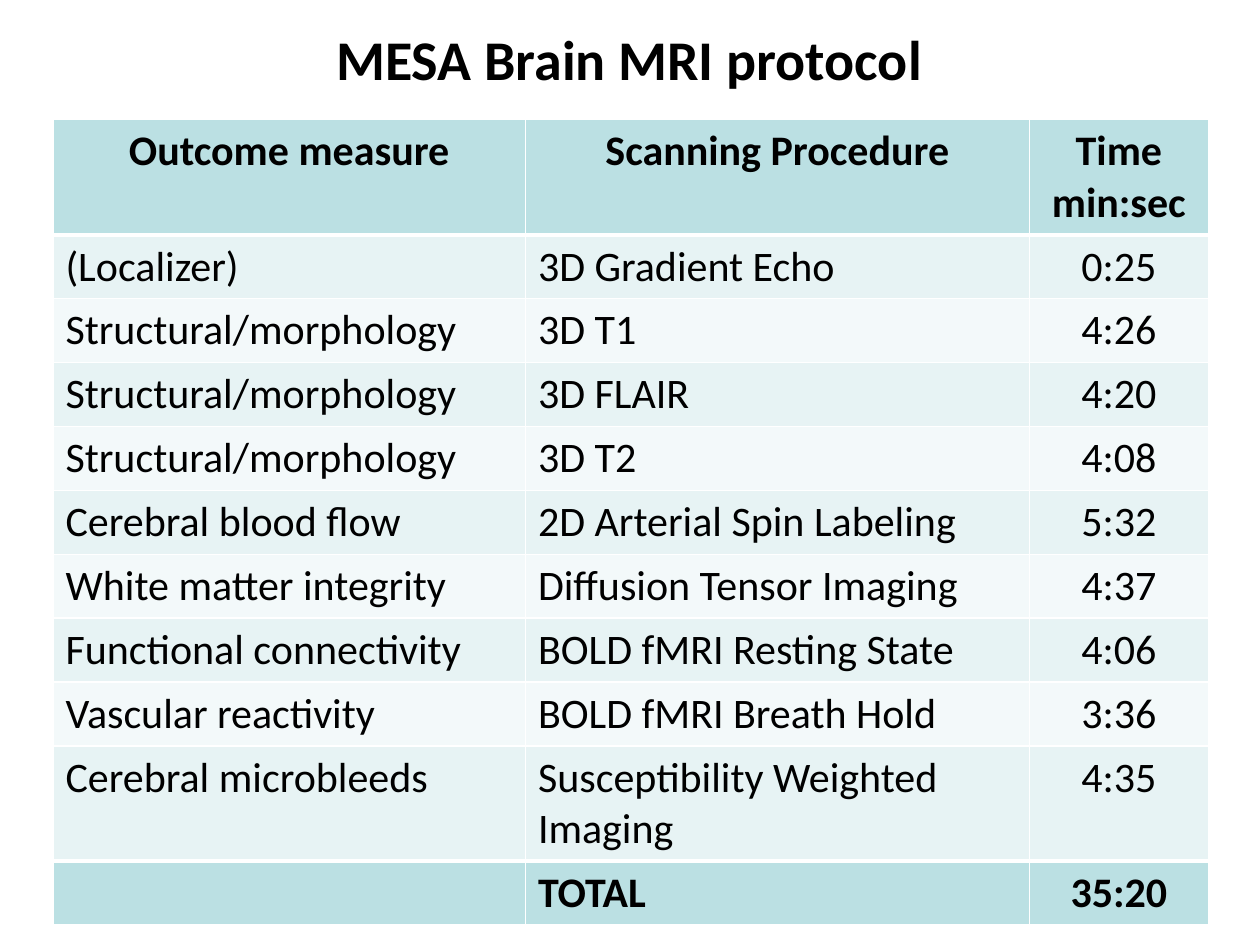
import pptx
import pptx.dml.color
import pptx.enum.text
import pptx.oxml
import pptx.oxml.ns
import pptx.util
from pptx.util import Inches

FONT = "Calibri"
COLORS = {
    "text": "000000",
    "border": "FFFFFF",
    "accent": "BBE0E3",
    "band_dark": "E7F3F4",
    "band_light": "F3F9FA",
}
COLUMN_WIDTHS = [3.75, 4, 1.42]
ROW_HEIGHT = 0.41
PROTOCOL = [
    ("Outcome measure", "Scanning Procedure", "Time\nmin:sec"),
    ("(Localizer)", "3D Gradient Echo", "0:25"),
    ("Structural/morphology", "3D T1", "4:26"),
    ("Structural/morphology", "3D FLAIR", "4:20"),
    ("Structural/morphology", "3D T2", "4:08"),
    ("Cerebral blood flow", "2D Arterial Spin Labeling", "5:32"),
    ("White matter integrity", "Diffusion Tensor Imaging", "4:37"),
    ("Functional connectivity", "BOLD fMRI Resting State", "4:06"),
    ("Vascular reactivity", "BOLD fMRI Breath Hold", "3:36"),
    ("Cerebral microbleeds", "Susceptibility Weighted Imaging", "4:35"),
    ("", "TOTAL", "35:20"),
]


def color(name):
    return pptx.dml.color.RGBColor.from_string(COLORS[name])


def format_text(frame, size, bold, centered):
    align = pptx.enum.text.PP_ALIGN
    for para in frame.paragraphs:
        para.alignment = align.CENTER if centered else align.LEFT
        para.font.size = pptx.util.Pt(size)
        for span in para.runs:
            span.font.name = FONT
            span.font.size = pptx.util.Pt(size)
            span.font.bold = bold
            span.font.color.rgb = color("text")


def set_borders(cell, top, bottom):
    """Draw all four cell edges; top and bottom are widths in points."""
    properties = cell._tc.get_or_add_tcPr()
    edges = [("lnL", 1), ("lnR", 1), ("lnT", top), ("lnB", bottom)]
    for index, (tag, width) in enumerate(edges):
        line = pptx.oxml.parse_xml(
            f'<a:{tag} {pptx.oxml.ns.nsdecls("a")} w="{pptx.util.Pt(width)}">'
            f'<a:solidFill><a:srgbClr val="{COLORS["border"]}"/></a:solidFill>'
            f'</a:{tag}>'
        )
        properties.insert(index, line)


def add_title(page, left, top, width, height):
    title = page.shapes.title
    title.left, title.top = Inches(left), Inches(top)
    title.width, title.height = Inches(width), Inches(height)
    frame = title.text_frame
    frame.text = "MESA Brain MRI protocol"
    frame.word_wrap = True
    frame.auto_size = pptx.enum.text.MSO_AUTO_SIZE.NONE
    frame.vertical_anchor = pptx.enum.text.MSO_ANCHOR.MIDDLE
    format_text(frame, 32, True, True)


def add_protocol_table(page, left, top):
    last = len(PROTOCOL) - 1
    table = page.shapes.add_table(
        len(PROTOCOL), len(COLUMN_WIDTHS), Inches(left), Inches(top),
        Inches(sum(COLUMN_WIDTHS)), Inches(ROW_HEIGHT * len(PROTOCOL)),
    ).table
    table.last_row = True
    for column, width in zip(table.columns, COLUMN_WIDTHS):
        column.width = Inches(width)

    for row, texts in enumerate(PROTOCOL):
        table.rows[row].height = Inches(ROW_HEIGHT)
        emphasized = row in (0, last)
        band = "band_dark" if row % 2 else "band_light"
        for column, text in enumerate(texts):
            cell = table.cell(row, column)
            cell.text_frame.text = text
            format_text(cell.text_frame, 24, emphasized, row == 0 or column == 2)
            cell.fill.solid()
            cell.fill.fore_color.rgb = color("accent" if emphasized else band)
            set_borders(
                cell,
                top=3 if row in (1, last) else 1,
                bottom=3 if row in (0, last - 1) else 1,
            )


def main():
    deck = pptx.Presentation()
    deck.slide_width, deck.slide_height = Inches(10), Inches(7.5)
    page = deck.slides.add_slide(deck.slide_layouts.get_by_name("Title Only"))
    add_title(page, 0.85, 0.17, 8.29, 0.58)
    add_protocol_table(page, 0.42, 0.95)
    deck.save("out.pptx")


if __name__ == "__main__":
    main()
